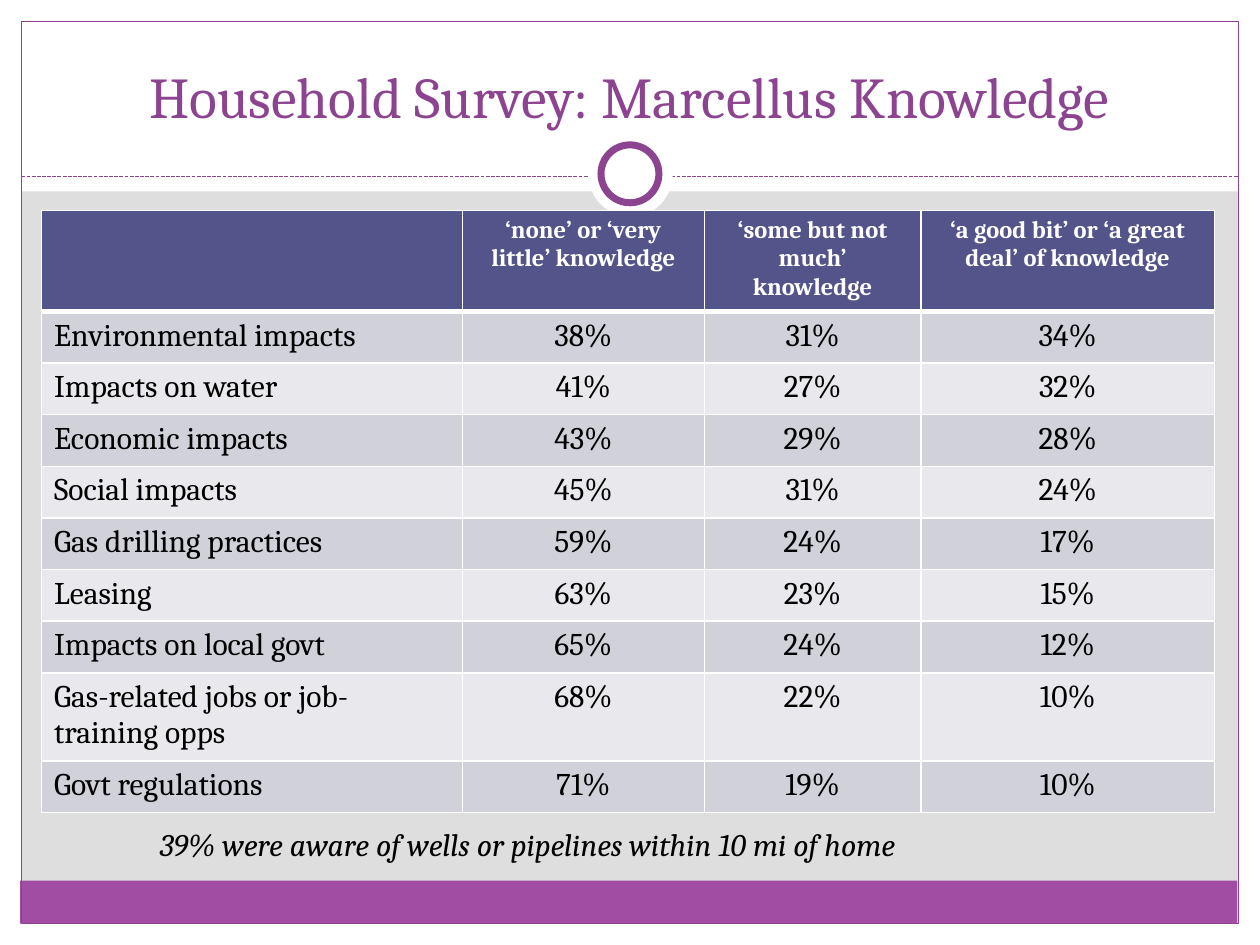
from pptx import Presentation
from pptx.dml.color import RGBColor
from pptx.enum.dml import MSO_LINE
from pptx.enum.shapes import MSO_CONNECTOR, MSO_SHAPE
from pptx.enum.text import MSO_ANCHOR, PP_ALIGN
from pptx.oxml import parse_xml
from pptx.oxml.ns import nsdecls
from pptx.util import Inches, Pt

HUES = {"back": "DEDEDE", "white": "FFFFFF", "black": "000000", "bar": "A04DA3",
        "plum": "8D4490", "head": "53548A", "dark": "D1D1DA", "light": "E9E9ED"}
HEADS = ["", "‘none’ or ‘very little’ knowledge", "‘some but not much’ knowledge",
         "‘a good bit’ or ‘a great deal’ of knowledge"]
ROWS = [
    ("Environmental impacts", 38, 31, 34),
    ("Impacts on water", 41, 27, 32),
    ("Economic impacts", 43, 29, 28),
    ("Social impacts", 45, 31, 24),
    ("Gas drilling practices", 59, 24, 17),
    ("Leasing", 63, 23, 15),
    ("Impacts on local govt", 65, 24, 12),
    ("Gas-related jobs or job-training opps", 68, 22, 10),
    ("Govt regulations", 71, 19, 10),
]


class Deck:
    """Holds the style and the current slide, and draws each kind of element."""

    def __init__(self, font):
        self.font = font
        self.prs = Presentation()
        self.prs.slide_width, self.prs.slide_height = Inches(10), Inches(7.5)
        self.slide = self.prs.slides.add_slide(self.prs.slide_layouts[6])
        self.paint(self.slide.background.fill, "back")

    def hue(self, name):
        return RGBColor.from_string(HUES[name])

    def paint(self, fill, name):
        fill.solid()
        fill.fore_color.rgb = self.hue(name)

    def label(self, frame, text, hue, align=PP_ALIGN.LEFT, **style):
        para = frame.paragraphs[0]
        para.alignment = align
        run = para.add_run()
        run.text = text
        for key, value in {"name": self.font, **style}.items():
            setattr(run.font, key, value)
        run.font.color.rgb = self.hue(hue)

    def shape(self, kind, box, fill=None, line=None, width=0.75):
        item = self.slide.shapes.add_shape(kind, *map(Inches, box))
        item.shadow.inherit = False
        if fill:
            self.paint(item.fill, fill)
        else:
            item.fill.background()
        if line:
            item.line.color.rgb = self.hue(line)
            item.line.width = Pt(width)
        else:
            item.line.fill.background()

    def rule(self, start, end, hue):
        item = self.slide.shapes.add_connector(
            MSO_CONNECTOR.STRAIGHT, *map(Inches, start + end))
        item.line.color.rgb = self.hue(hue)
        item.line.width = Pt(0.75)
        item.line.dash_style = MSO_LINE.SQUARE_DOT
        item._element.spPr.append(parse_xml(f"<a:effectLst {nsdecls('a')}/>"))

    def text(self, box, text, hue, anchor=MSO_ANCHOR.TOP, **style):
        frame = self.slide.shapes.add_textbox(*map(Inches, box)).text_frame
        for key, value in {"word_wrap": True, "vertical_anchor": anchor}.items():
            setattr(frame, key, value)
        self.label(frame, text, hue, **style)

    def edge(self, cell, widths):
        props = cell._tc.get_or_add_tcPr()
        for spot, (side, width) in enumerate(widths.items()):
            props.insert(spot, parse_xml(
                f'<a:ln{side} {nsdecls("a")} w="{Pt(width)}"><a:solidFill>'
                f'<a:srgbClr val="{HUES["white"]}"/></a:solidFill></a:ln{side}>'))

    def table(self, spot, cols, high, heads, rows):
        data = [heads] + [[name] + [f"{n}%" for n in nums] for name, *nums in rows]
        size = (sum(cols), high * len(data))
        grid = self.slide.shapes.add_table(
            len(data), len(cols), *map(Inches, spot + size)).table
        for col, wide in zip(grid.columns, cols):
            col.width = Inches(wide)
        for r, row in enumerate(data):
            grid.rows[r].height = Inches(high)
            fill = "head" if r == 0 else "dark" if r % 2 else "light"
            hue = "black" if r else "white"
            for c, text in enumerate(row):
                cell = grid.cell(r, c)
                self.paint(cell.fill, fill)
                self.edge(cell, {"L": 1, "R": 1, "T": 3 if r == 1 else 1,
                                 "B": 1 if r else 3})
                if text:
                    self.label(cell.text_frame, text, hue,
                               PP_ALIGN.CENTER if c else PP_ALIGN.LEFT,
                               size=Pt(18 if r else 14), bold=r == 0)


def main():
    deck = Deck("Cambria")
    rect, oval = MSO_SHAPE.RECTANGLE, MSO_SHAPE.OVAL
    for box in [(0, 7.33, 10, 0.17), (0, 0, 10, 1.52),
                (0, 0, 0.17, 7.5), (9.83, 0, 0.17, 7.5)]:
        deck.shape(rect, box, "white")
    deck.shape(rect, (0.16, 6.99, 9.66, 0.34), "bar")
    deck.shape(rect, (0.17, 0.17, 9.66, 7.16), line="plum")
    deck.rule((0.17, 1.4), (9.83, 1.4), "plum")
    deck.shape(oval, (4.67, 1.05, 0.67, 0.67), "white")
    deck.shape(oval, (4.77, 1.15, 0.46, 0.46), "white", "plum", 4)
    deck.text((0.33, 0.25, 9.33, 0.83), "Household Survey: Marcellus Knowledge",
              "plum", MSO_ANCHOR.BOTTOM, align=PP_ALIGN.CENTER, size=Pt(33))
    deck.table((0.33, 1.67), (3.34, 1.92, 1.72, 2.33), 0.41, HEADS, ROWS)
    deck.text((1.17, 6.5, 6.84, 0.4),
              "39% were aware of wells or pipelines within 10 mi of home",
              "black", size=Pt(18), italic=True)
    deck.prs.save("out.pptx")


if __name__ == "__main__":
    main()
